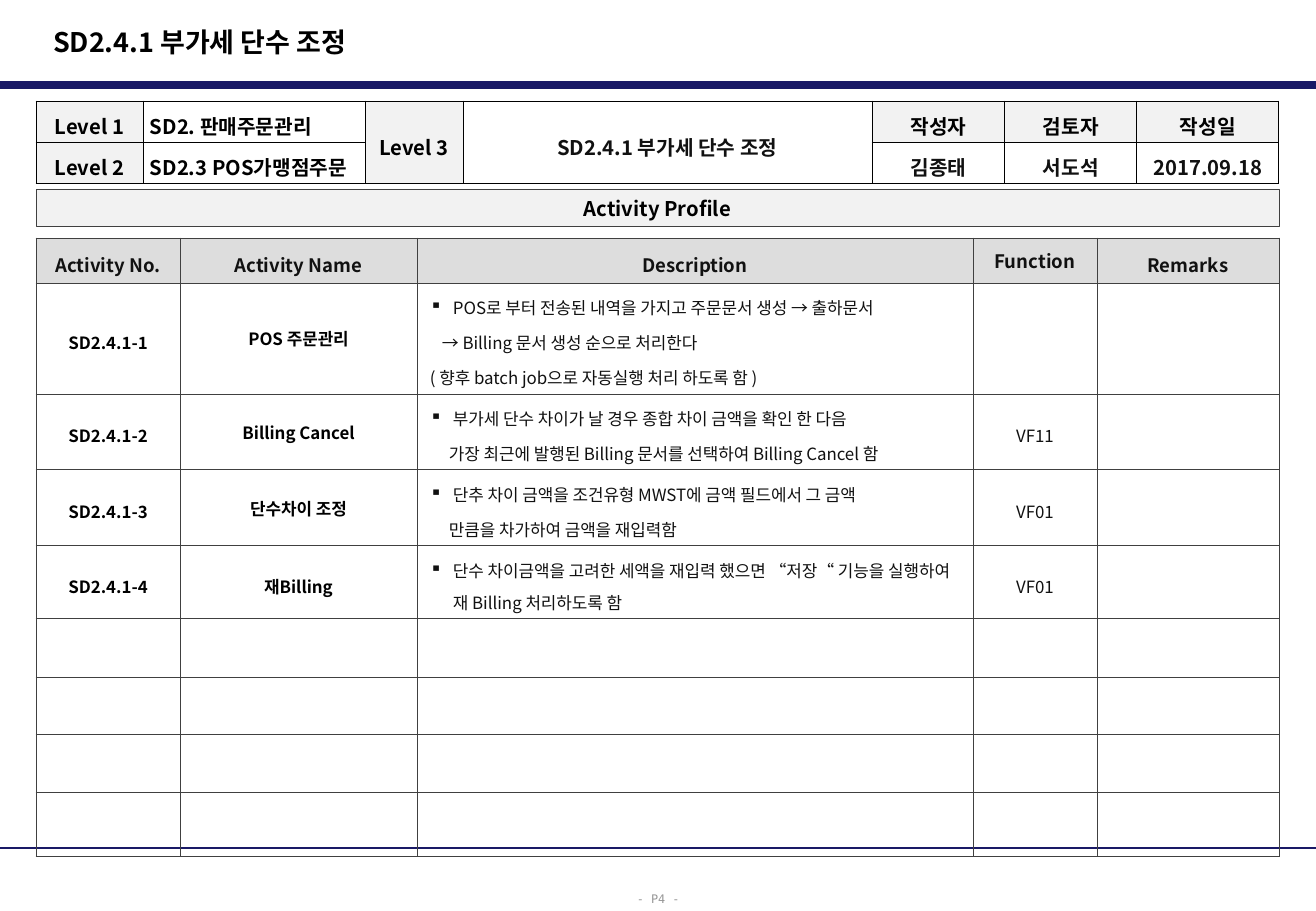
import pptx
import pptx.util
import pptx.oxml
import pptx.oxml.ns
import pptx.dml.color
import pptx.enum.text
import pptx.enum.shapes

PX = 914400 / 121.5  # EMU in one px
SANS = "Noto Sans CJK KR"
COLORS = {
    "navy": "191966", "black": "000000", "ink": "111111", "rule": "404040",
    "head": "DDDDDD", "label": "F2F2F2", "muted": "969696",
}
LEFT = pptx.enum.text.PP_ALIGN.LEFT
CENTER = pptx.enum.text.PP_ALIGN.CENTER
MIDDLE = pptx.enum.text.MSO_ANCHOR.MIDDLE
SubElement = pptx.oxml.ns.qn


def emu(*lengths):
    return [pptx.util.Emu(round(n * PX)) for n in lengths]


def write(frame, text, size=10, color="black", bold=False, align=CENTER,
          font=SANS, spacing=None, gap=0, indents=(0,), bullet=None):
    """Write one paragraph per line of text; indents holds px for each one."""
    frame.text = text
    for i, paragraph in enumerate(frame.paragraphs):
        paragraph.alignment = align
        if spacing:
            paragraph.line_spacing = spacing
        if i:
            paragraph.space_before = pptx.util.Pt(gap)
        props = paragraph._p.get_or_add_pPr()
        margin = emu(indents[i])[0] if i < len(indents) else 0
        props.set("marL", str(margin))
        props.set("indent", str(-margin if bullet and i == 0 else 0))
        if bullet and i == 0:
            mark = pptx.oxml.parse_xml(
                f'<a:buChar {pptx.oxml.ns.nsdecls("a")} char="{bullet}"/>')
            props.append(mark)
        for run in paragraph.runs:
            run.font.size = pptx.util.Pt(size)
            run.font.bold = bold
            run.font.name = font
            run.font.color.rgb = pptx.dml.color.RGBColor.from_string(COLORS[color])
            run.font._element.append(pptx.oxml.parse_xml(
                f'<a:ea {pptx.oxml.ns.nsdecls("a")} typeface="{font}"/>'))


deck = pptx.Presentation()
deck.slide_width, deck.slide_height = emu(1316, 911)
slide = deck.slides.add_slide(deck.slide_layouts[5])
shapes = slide.shapes

# Title
title = shapes.title
title.left, title.top, title.width, title.height = emu(41, 19, 864, 46)
title.text_frame.vertical_anchor = MIDDLE
write(title.text_frame, "SD2.4.1 부가세 단수 조정", size=16, bold=True, align=LEFT)

# Rules above and below the content
for y, weight in ((85, 4.5), (848, 1.5)):
    rule = shapes.add_connector(pptx.enum.shapes.MSO_CONNECTOR.STRAIGHT,
                                *emu(0, y, 1316, y))
    rule.line.color.rgb = pptx.dml.color.RGBColor.from_string(COLORS["navy"])
    rule.line.width = pptx.util.Pt(weight)
    rule._element.spPr.append(pptx.oxml.parse_xml(
        f'<a:effectLst {pptx.oxml.ns.nsdecls("a")}/>'))

# Page number
page_number = shapes.add_textbox(*emu(625, 881, 68, 30)).text_frame
page_number.word_wrap = False
write(page_number, "- P4 -", size=7, color="muted", align=LEFT,
      font="DejaVu Sans Mono", spacing=1.3)

# Section bar
section = shapes.add_shape(pptx.enum.shapes.MSO_SHAPE.RECTANGLE,
                           *emu(36, 189, 1243, 38))
section.shadow.inherit = False
section.fill.solid()
section.fill.fore_color.rgb = pptx.dml.color.RGBColor.from_string(COLORS["label"])
section.line.color.rgb = pptx.dml.color.RGBColor.from_string(COLORS["rule"])
section.line.width = pptx.util.Pt(0.5)
section.text_frame.word_wrap = False
section.text_frame.vertical_anchor = MIDDLE
write(section.text_frame, "Activity Profile", size=12, bold=True)

# Activity and level tables: empty grids with borders and insets
grids = []
for top, widths, heights, border, inset_x, inset_y in (
    (238, [144, 237, 556, 124, 182], [45, 111, 76, 76, 73, 59, 57, 58, 64],
     "rule", 13, 5),
    (101, [107, 222, 98, 409, 133, 132, 142], [41, 41], "black", 7, 1),
):
    grid = shapes.add_table(len(heights), len(widths),
                            *emu(36, top, sum(widths), sum(heights))).table
    grid.first_row = grid.horz_banding = False
    for column, width in zip(grid.columns, emu(*widths)):
        column.width = width
    for row, height in zip(grid.rows, emu(*heights)):
        row.height = height
    for cell in grid.iter_cells():
        cell.vertical_anchor = MIDDLE
        cell.margin_left, cell.margin_top = emu(inset_x, inset_y)
        cell.margin_right, cell.margin_bottom = emu(inset_x, inset_y)
        for side in ("lnL", "lnR", "lnT", "lnB"):
            cell._tc.get_or_add_tcPr().append(pptx.oxml.parse_xml(
                f'<a:{side} {pptx.oxml.ns.nsdecls("a")} w="6350"><a:solidFill>'
                f'<a:srgbClr val="{COLORS[border]}"/></a:solidFill></a:{side}>'))
        cell.fill.background()
    grids.append(grid)
activities, levels = grids

# Activity headings
headings = ["Activity No.", "Activity Name", "Description", "Function", "Remarks"]
for col, heading in enumerate(headings):
    cell = activities.cell(0, col)
    cell.fill.solid()
    cell.fill.fore_color.rgb = pptx.dml.color.RGBColor.from_string(COLORS["head"])
    is_function = heading == "Function"
    if is_function:
        cell.margin_top = cell.margin_bottom = 0
    write(cell.text_frame, heading, size=11, color="ink", bold=True,
          spacing=None if is_function else 1.3)

# Activity rows: name, name line spacing, description, indents, function
steps = [
    ("POS 주문관리", None,
     "POS로 부터 전송된 내역을 가지고 주문문서 생성 → 출하문서\n"
     "→ Billing 문서 생성 순으로 처리한다\n"
     "( 향후 batch job으로 자동실행 처리 하도록 함 )", (23, 12, 0), ""),
    ("Billing Cancel", None,
     "부가세 단수 차이가 날 경우 종합 차이 금액을 확인 한 다음\n"
     "가장 최근에 발행된 Billing 문서를 선택하여 Billing Cancel 함", (23, 19), "VF11"),
    ("단수차이 조정", None,
     "단추 차이 금액을 조건유형 MWST에 금액 필드에서 그 금액\n"
     "만큼을 차가하여 금액을 재입력함", (23, 19), "VF01"),
    ("재Billing", 1.3,
     "단수 차이금액을 고려한 세액을 재입력 했으면 “저장“ 기능을 실행하여\v"
     "재 Billing 처리하도록 함", (23,), "VF01"),
]
for row, (name, name_spacing, description, indents, function) in enumerate(steps, 1):
    number, label, detail, code = [activities.cell(row, c).text_frame for c in range(4)]
    write(number, f"SD2.4.1-{row}", bold=True, spacing=1.3)
    write(label, name, bold=True, spacing=name_spacing)
    write(detail, description, color="ink", align=LEFT, spacing=1.3, gap=2,
          indents=indents, bullet="▪")
    if function:
        write(code, function, color="ink", spacing=1.3)

# Level table
for col in (2, 3):
    levels.cell(0, col).merge(levels.cell(1, col))
level_rows = [
    ["Level 1", "SD2. 판매주문관리", "Level 3", "SD2.4.1 부가세 단수 조정",
     "작성자", "검토자", "작성일"],
    ["Level 2", "SD2.3 POS가맹점주문", None, None, "김종태", "서도석", "2017.09.18"],
]
for row, entries in enumerate(level_rows):
    for col, entry in enumerate(entries):
        if entry is None:
            continue
        cell = levels.cell(row, col)
        is_label = col in (0, 2) or (row == 0 and col > 3)
        if is_label:
            cell.fill.solid()
            cell.fill.fore_color.rgb = pptx.dml.color.RGBColor.from_string(COLORS["label"])
        write(cell.text_frame, entry, size=12, bold=True, spacing=1.3,
              color="black" if is_label or col == 1 else "ink",
              align=LEFT if col == 1 else CENTER)

deck.save("out.pptx")
